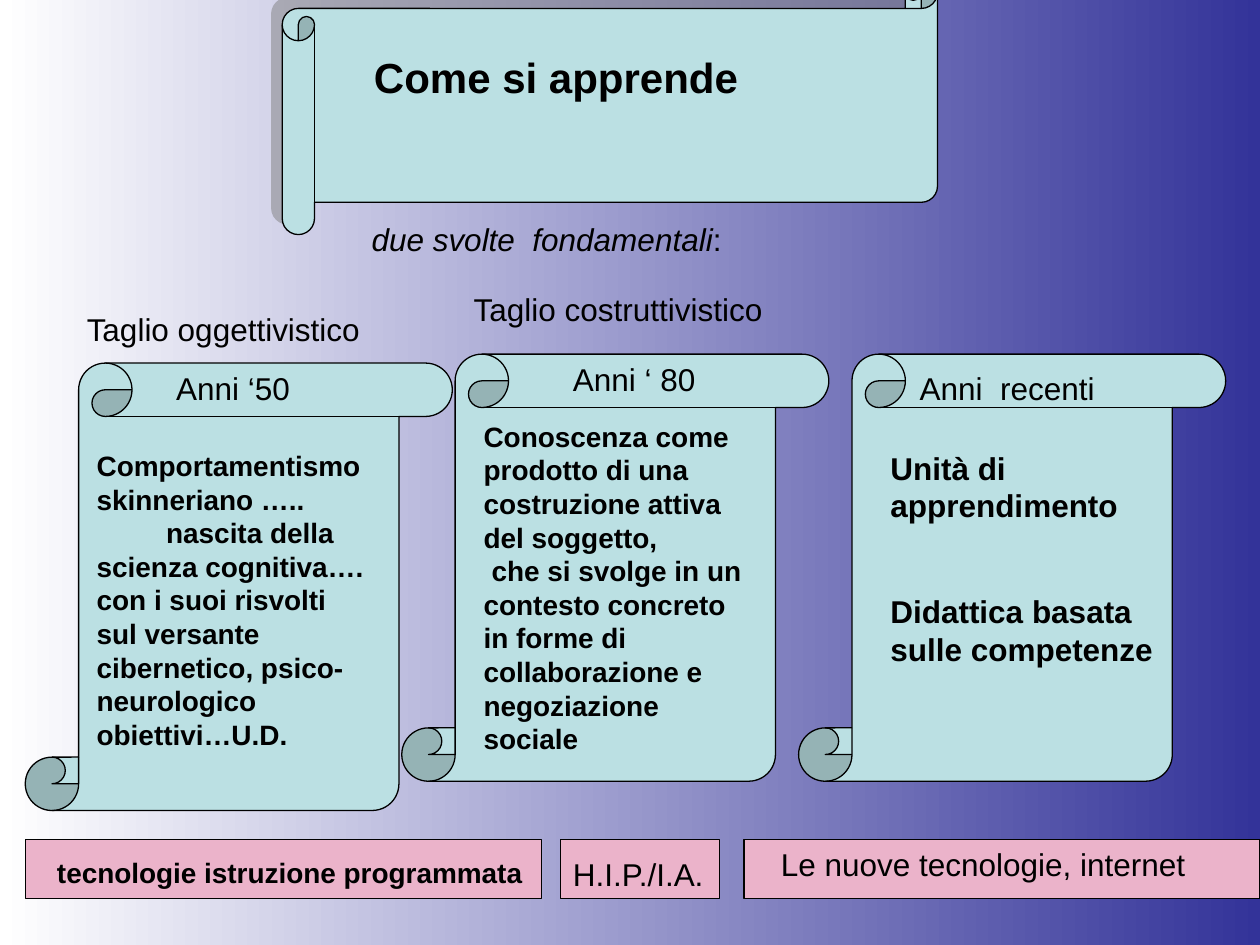
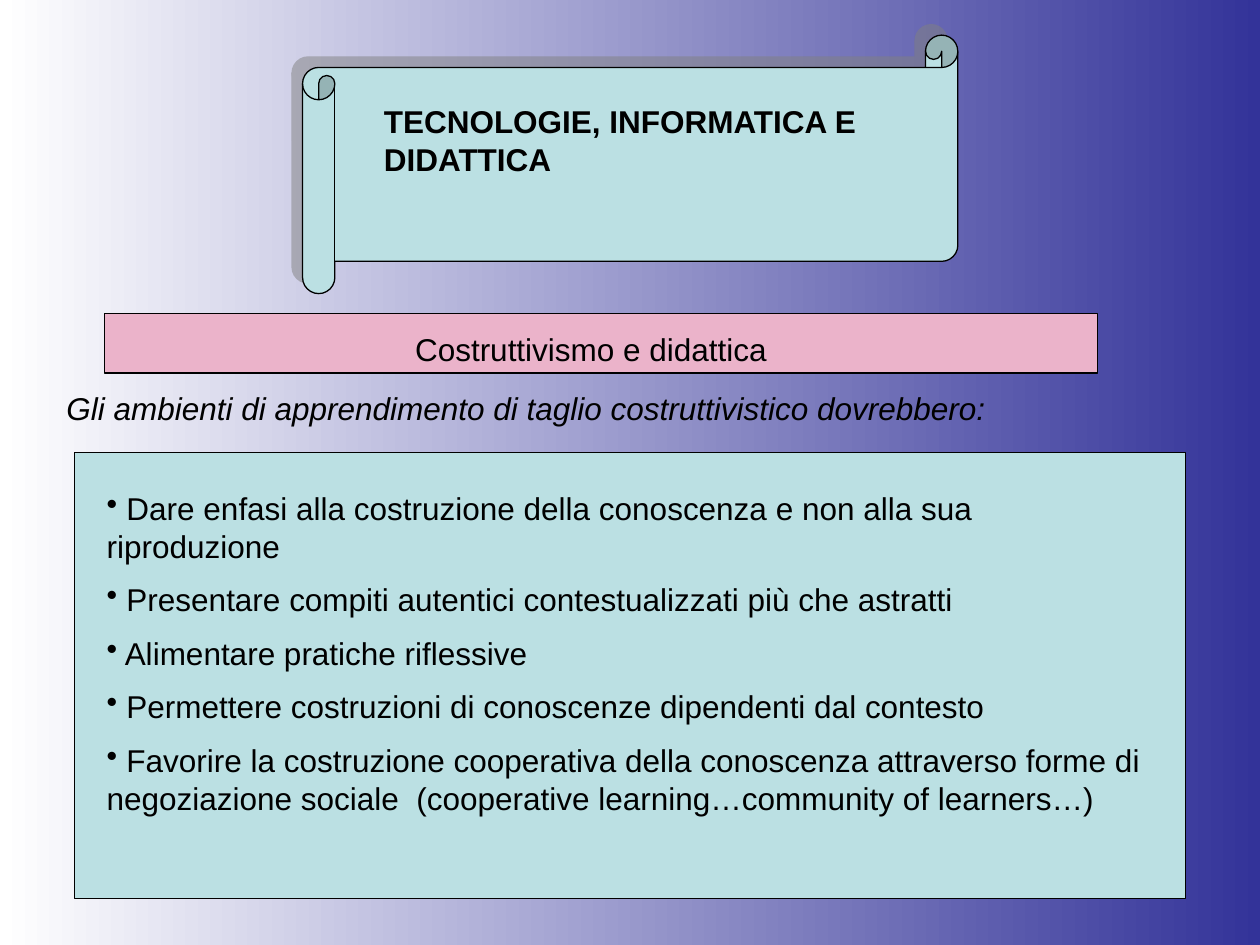
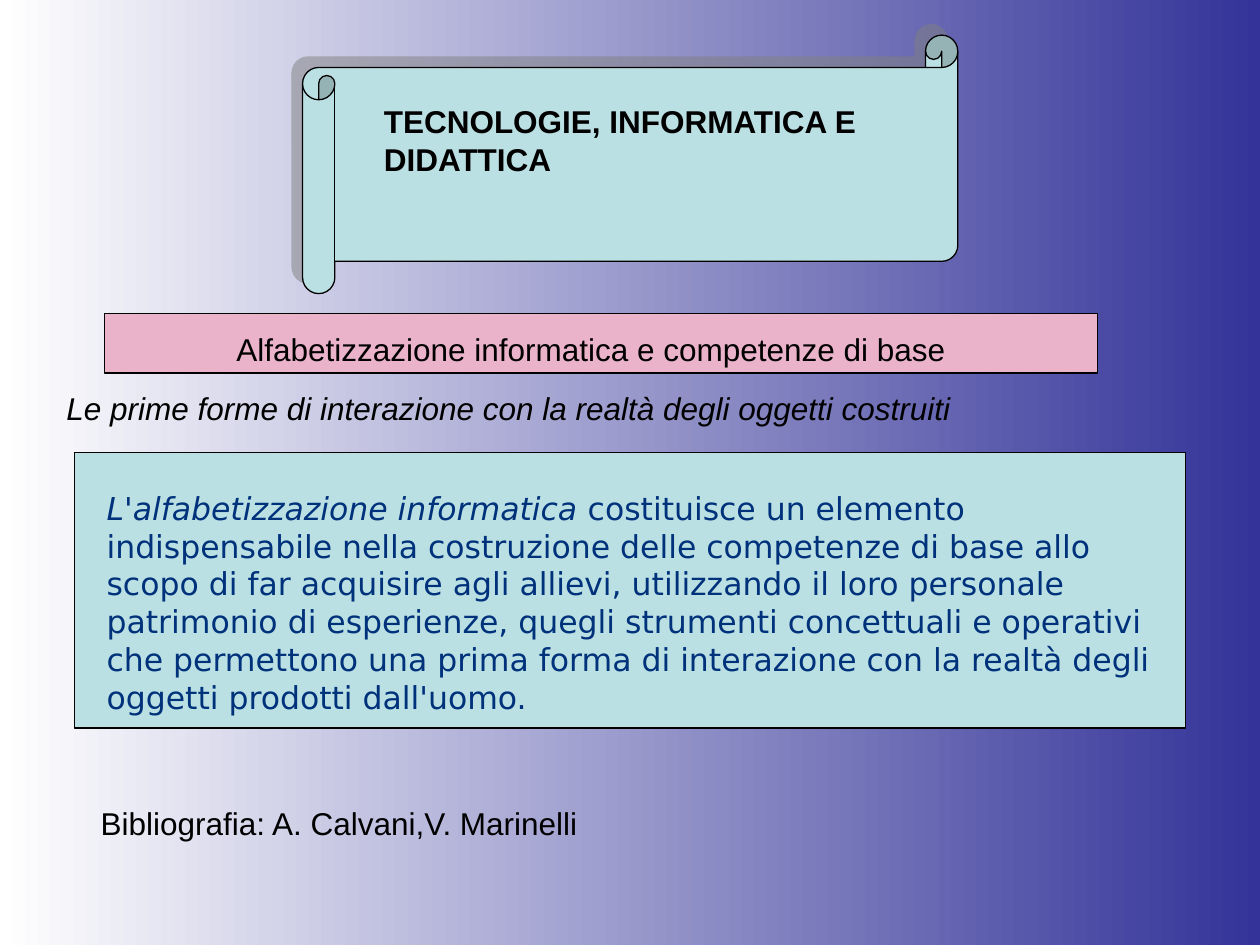
from lxml.etree import SubElement
from pptx import Presentation
from pptx.dml.color import RGBColor
from pptx.enum.shapes import MSO_SHAPE as SHAPE
from pptx.enum.text import MSO_AUTO_SIZE as AUTO_SIZE, PP_ALIGN as ALIGN
from pptx.oxml.ns import qn
from pptx.util import Cm, Pt

COLORS = {
    "ink": "000000",
    "white": "FFFFFF",
    "indigo": "333399",
    "aqua": "BBE0E3",
    "pink": "EBB3CA",
    "navy": "00317B",
    "shadow": "808080",
}


def add_panel(slide, kind, at, color, shadow=False):
    """Draw an outlined panel; at is left, top, width, height in cm."""
    panel = slide.shapes.add_shape(kind, *[Cm(n) for n in at])
    panel.shadow.inherit = False
    panel.fill.solid()
    panel.fill.fore_color.rgb = RGBColor.from_string(COLORS[color])
    panel.line.color.rgb = RGBColor.from_string(COLORS["ink"])
    panel.line.width = Pt(0.75)
    if shadow:
        effects = panel.element.spPr.find(qn("a:effectLst"))
        outer = SubElement(effects, qn("a:outerShdw"), dist=str(Pt(8.5)),
                           dir=str(225 * 60000), algn="ctr", rotWithShape="0")
        tone = SubElement(outer, qn("a:srgbClr"), val=COLORS["shadow"])
        SubElement(tone, qn("a:alpha"), val="50000")


def write(slide, at, *paragraphs, size=18, font="Arial", color="ink", bold=False,
          italic=False, align=ALIGN.LEFT, gap=0, indents=(), bullet=None):
    """Write paragraphs, each a string or a list of (text, italic) runs."""
    box = slide.shapes.add_textbox(*[Cm(n) for n in at])
    frame = box.text_frame
    frame.word_wrap = True
    frame.auto_size = AUTO_SIZE.SHAPE_TO_FIT_TEXT
    for i, content in enumerate(paragraphs):
        paragraph = frame.add_paragraph() if i else frame.paragraphs[0]
        paragraph.alignment = align
        paragraph.space_before = Pt(gap if i else 0)
        properties = paragraph._p.get_or_add_pPr()
        if i < len(indents):
            properties.set("indent", str(Cm(indents[i])))
        if bullet:
            SubElement(properties, qn("a:buChar"), char=bullet)
        runs = [(content, italic)] if isinstance(content, str) else content
        for text, slanted in runs:
            for j, line in enumerate(text.split("\n")):
                if j:
                    paragraph.add_line_break()
                run = paragraph.add_run()
                run.text = line
                run.font.name = font
                run.font.size = Pt(size)
                run.font.bold = bold
                run.font.italic = slanted
                run.font.color.rgb = RGBColor.from_string(COLORS[color])


deck = Presentation()
deck.slide_width, deck.slide_height = Cm(25.4), Cm(19.05)
blank = deck.slide_layouts[6]

backdrop = deck.slide_master.background.fill
backdrop.gradient()
backdrop.gradient_angle = 0
for stop, shade in zip(backdrop.gradient_stops, ("white", "indigo")):
    stop.color.rgb = RGBColor.from_string(COLORS[shade])

# Slide 1: the turning points in learning
turns = deck.slides.add_slide(blank)
add_panel(turns, SHAPE.HORIZONTAL_SCROLL, (5.69, -0.48, 13.21, 5.21), "aqua", shadow=True)
write(turns, (7.29, 0.91, 11, 1.27), "Come si apprende", size=24, bold=True)
write(turns, (5.31, 4.32, 12.4, 1.02),
      [("due svolte  fondamentali", True), (":", False)], indents=[1.93])

eras = [
    ((0.51, 7.32, 8.61, 9.02), (3.3, 7.32, 4.6, 1.02), "Anni ‘50",
     (1.7, 8.92, 6, 6.38),
     ["Comportamentismo skinneriano …..",
      "nascita della scienza cognitiva…. con i suoi risvolti sul versante "
      "cibernetico, psico-neurologico obiettivi…U.D."],
     {"size": 16, "indents": [0, 1.4]}),
    ((8.1, 7.14, 8.61, 8.61), (11.3, 7.14, 4.4, 1.02), "Anni ‘ 80",
     (9.5, 8.33, 6, 7.04),
     ["Conoscenza come prodotto di una costruzione attiva del soggetto,",
      "che si svolge in un contesto concreto in forme di collaborazione e "
      "negoziazione sociale"],
     {"size": 16, "indents": [0, 0.16]}),
    ((16.1, 7.14, 8.61, 8.61), (18.29, 7.32, 6.4, 1.02), "Anni  recenti",
     (17.7, 8.92, 5.8, 5.59),
     ["Unità di apprendimento", "Didattica basata sulle competenze"],
     {"gap": 39}),
]
for scroll_at, years_at, years, theory_at, theory, style in eras:
    add_panel(turns, SHAPE.VERTICAL_SCROLL, scroll_at, "aqua")
    write(turns, years_at, years)
    write(turns, theory_at, *theory, bold=True, **style)

write(turns, (1.5, 6.12, 8, 1.02), "Taglio oggettivistico")
write(turns, (9.3, 5.72, 8, 1.02), "Taglio costruttivistico")

technologies = [
    (0.51, 10.41, (0.9, 17.12, 10.2, 0.94), "tecnologie istruzione programmata",
     {"size": 16, "bold": True}),
    (11.3, 3.2, (11.3, 17.12, 3.4, 1.02), "H.I.P./I.A.", {}),
    (15, 10.4, (15.49, 16.92, 9.4, 1.02), "Le nuove tecnologie, internet", {}),
]
for left, width, label_at, label, style in technologies:
    add_panel(turns, SHAPE.RECTANGLE, (left, 16.92, width, 1.2), "pink")
    write(turns, label_at, label, **style)

# Slides 2 and 3: technology and teaching
topics = [
    ("Costruttivismo e didattica",
     "Gli ambienti di apprendimento di taglio costruttivistico dovrebbero:", 9,
     [" Dare enfasi alla costruzione della conoscenza e non alla sua\nriproduzione",
      " Presentare compiti autentici contestualizzati più che astratti",
      " Alimentare pratiche riflessive",
      " Permettere costruzioni di conoscenze dipendenti dal contesto",
      " Favorire la costruzione cooperativa della conoscenza attraverso forme di "
      "negoziazione sociale  (cooperative learning…community of learners…)"],
     {"bullet": "•", "gap": 9}),
    ("Alfabetizzazione informatica e competenze di base",
     "Le prime forme di interazione con la realtà degli oggetti costruiti", 5.56,
     [[("L'alfabetizzazione informatica", True),
       (" costituisce un elemento indispensabile nella costruzione delle competenze "
        "di base allo scopo di far acquisire agli allievi, utilizzando il loro "
        "personale patrimonio di esperienze, quegli strumenti concettuali e operativi "
        "che permettono una prima forma di interazione con la realtà degli oggetti "
        "prodotti dall'uomo.", False)]],
     {"font": "DejaVu Sans", "color": "navy"}),
]
for heading, lead, body_height, body, style in topics:
    topic = deck.slides.add_slide(blank)
    add_panel(topic, SHAPE.HORIZONTAL_SCROLL, (6.1, 0.71, 13.21, 5.21), "aqua", shadow=True)
    write(topic, (7.49, 1.93, 11, 1.78), "TECNOLOGIE, INFORMATICA E DIDATTICA", bold=True)
    add_panel(topic, SHAPE.RECTANGLE, (2.11, 6.32, 20.02, 1.2), "pink")
    write(topic, (3.71, 6.53, 16.41, 1.02), heading, align=ALIGN.CENTER)
    add_panel(topic, SHAPE.RECTANGLE, (1.5, 9.12, 22.4, body_height), "aqua")
    write(topic, (1.09, 7.72, 23.01, 1.02), lead, italic=True)
    write(topic, (1.9, 9.73, 21.6, 7.14), *body, **style)

write(topic, (1.78, 16.08, 12.5, 1.02), "Bibliografia: A. Calvani,V. Marinelli")

deck.save("out.pptx")
